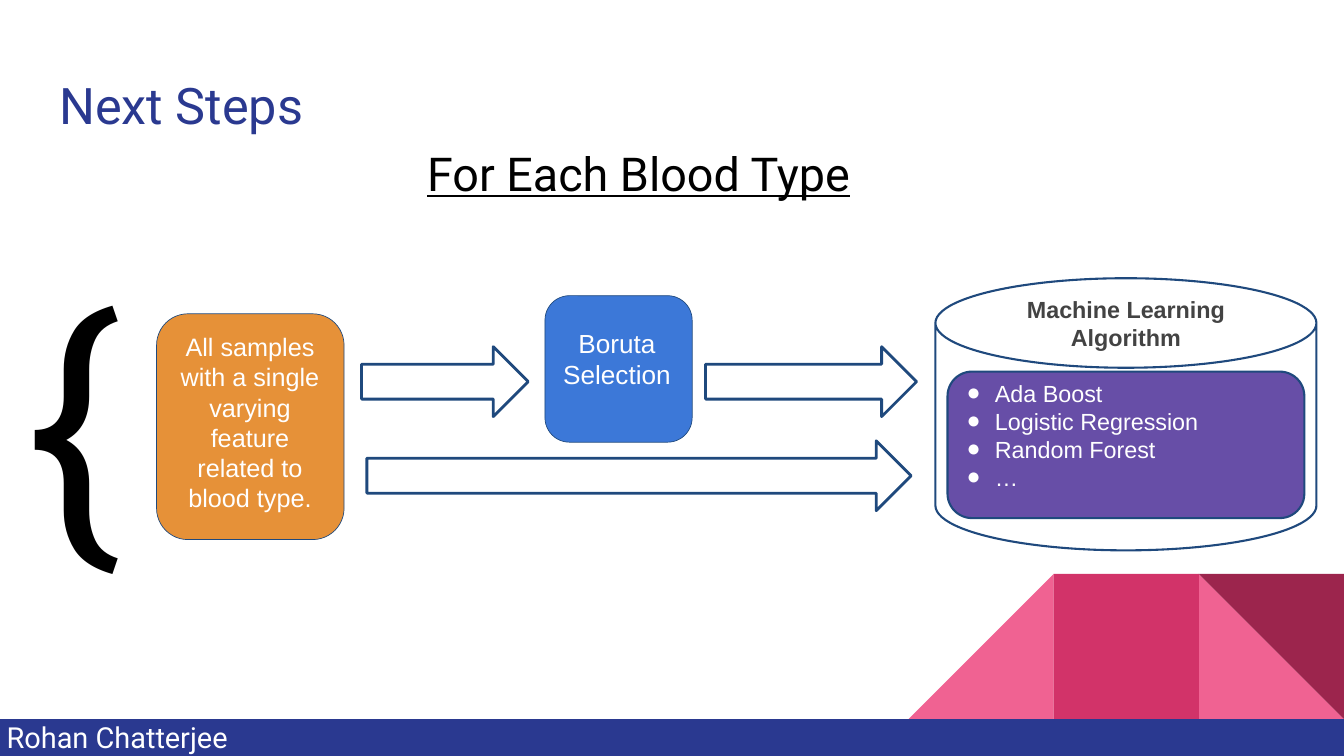
"""Build the "Next Steps" slide: a blood type machine learning workflow."""
import pptx
import pptx.dml.color
import pptx.enum.shapes
import pptx.enum.text
import pptx.oxml
import pptx.oxml.ns
import pptx.util
from pptx.util import Inches

SHAPE = pptx.enum.shapes.MSO_SHAPE
ALIGN = pptx.enum.text.PP_ALIGN
COLORS = {
    "navy": "2A3990", "outline": "1F497D", "pink": "F06292", "rose": "D23369",
    "wine": "9C254D", "orange": "E69138", "blue": "3C78D8", "purple": "674EA7",
    "white": "FFFFFF", "black": "000000", "gray": "434343",
}
ALGORITHMS = ["Ada Boost", "Logistic Regression", "Random Forest", "…"]
TILE = 2.16
TILE_TOP = 8.54
TILE_RIGHT = 20
TILES = [
    (1, SHAPE.RIGHT_TRIANGLE, "pink", 0, False),
    (3, SHAPE.RIGHT_TRIANGLE, "pink", 0, True),
    (2, SHAPE.RECTANGLE, "rose", 0, False),
    (1, SHAPE.RIGHT_TRIANGLE, "wine", 180, False),
]
BOXES = [
    (SHAPE.CAN, (13.92, 4.14, 5.67, 4.05), None, 2.25, 0.329),
    (SHAPE.ROUNDED_RECTANGLE, (2.33, 4.67, 2.79, 3.36), "orange", 0.75, 0.167),
    (SHAPE.ROUNDED_RECTANGLE, (8.11, 4.4, 2.19, 2.18), "blue", 0.75, 0.167),
]
ALGORITHM_BOX = (SHAPE.ROUNDED_RECTANGLE, (14.1, 5.53, 5.31, 2.18), "purple", 2.25, 0.167)
ARROWS = [(10.5, 5.16, 3.14), (5.46, 6.56, 8.1), (5.38, 5.16, 2.48)]
ARROW_HEIGHT = 1.04
LABELS = [
    ("Boruta Selection", (8.27, 4.77, 1.82, 1.42), 28, "Arial", "white", ALIGN.CENTER, {}),
    ("Machine Learning Algorithm", (14.69, 4.29, 4.13, 1.05), 25, "Arial", "gray",
     ALIGN.CENTER, {"bold": True}),
    ("Next Steps", (0.68, 0.9, 18.64, 1.33), 54, "Roboto", "navy", ALIGN.LEFT, {"inset": 0.2}),
    ("{", (0.29, 3.54, 2.19, 5.25), 300, "Roboto", "black", ALIGN.LEFT, {}),
    ("All samples with a single varying feature related to blood type.",
     (2.48, 4.83, 2.48, 3.04), 27, "Arial", "white", ALIGN.CENTER, {}),
    ("For Each Blood Type", (5.74, 2.05, 7.53, 1.04), 50, "Roboto", "black",
     ALIGN.CENTER, {"underline": True}),
    ("Rohan Chatterjee", (0, 10.61, 4.94, 0.72), 31, "Roboto", "white", ALIGN.LEFT, {}),
]


def color(name):
    return pptx.dml.color.RGBColor.from_string(COLORS[name])


def add_shape(slide, kind, place, fill=None, line_width=None, adjustment=None):
    shape = slide.shapes.add_shape(kind, *map(Inches, place))
    shape.shadow.inherit = False
    if fill:
        shape.fill.solid()
        shape.fill.fore_color.rgb = color(fill)
    else:
        shape.fill.background()
    if line_width:
        shape.line.color.rgb = color("outline")
        shape.line.width = pptx.util.Pt(line_width)
    else:
        shape.line.fill.background()
    if adjustment is not None:
        shape.adjustments[0] = adjustment
    return shape


def prepare_frame(shape, inset=0.1):
    frame = shape.text_frame
    frame.word_wrap = True
    frame.vertical_anchor = pptx.enum.text.MSO_ANCHOR.TOP
    frame.margin_left = frame.margin_right = Inches(inset)
    frame.margin_top = frame.margin_bottom = Inches(inset)
    return frame


def add_run(paragraph, text, size, font, ink, bold=False, underline=False):
    run = paragraph.add_run()
    run.text = text
    run.font.size = pptx.util.Pt(size)
    run.font.name = font
    run.font.color.rgb = color(ink)
    run.font.bold = bold
    run.font.underline = underline


def add_bullet(paragraph):
    properties = paragraph._p.get_or_add_pPr()
    properties.set("marL", str(Inches(0.5)))
    properties.set("indent", str(Inches(-0.42)))
    namespace = pptx.oxml.ns.nsdecls("a")
    for markup in (
        f'<a:buClr {namespace}><a:srgbClr val="{COLORS["white"]}"/></a:buClr>',
        f'<a:buFont {namespace} typeface="Arial"/>',
        f'<a:buChar {namespace} char="●"/>',
    ):
        properties.append(pptx.oxml.parse_xml(markup))


def add_label(slide, text, place, size, font, ink, alignment, options):
    box = slide.shapes.add_textbox(*map(Inches, place))
    frame = prepare_frame(box, options.get("inset", 0.1))
    paragraph = frame.paragraphs[0]
    paragraph.alignment = alignment
    add_run(paragraph, text, size, font, ink,
            options.get("bold", False), options.get("underline", False))


def add_algorithms(slide):
    frame = prepare_frame(add_shape(slide, *ALGORITHM_BOX))
    frame.margin_top = 0
    for index, name in enumerate(ALGORITHMS):
        paragraph = frame.add_paragraph() if index else frame.paragraphs[0]
        paragraph.alignment = ALIGN.LEFT
        add_bullet(paragraph)
        add_run(paragraph, name, 25, "Arial", "white")


def main():
    presentation = pptx.Presentation()
    presentation.slide_width = Inches(20)
    presentation.slide_height = Inches(11.25)
    slide = presentation.slides.add_slide(presentation.slide_layouts[6])

    for column, kind, fill, rotation, flipped in TILES:
        place = (TILE_RIGHT - column * TILE, TILE_TOP, TILE, TILE)
        tile = add_shape(slide, kind, place, fill)
        tile.rotation = rotation
        if flipped:
            tile._element.spPr.get_or_add_xfrm().set("flipH", "1")
    add_shape(slide, SHAPE.RECTANGLE, (0, 10.7, 20, 0.55), "navy")

    for box in BOXES:
        add_shape(slide, *box)
    add_algorithms(slide)
    for left, top, width in ARROWS:
        add_shape(slide, SHAPE.RIGHT_ARROW, (left, top, width, ARROW_HEIGHT), None, 3, 0.5)
    for label in LABELS:
        add_label(slide, *label)

    presentation.save("out.pptx")


if __name__ == "__main__":
    main()
